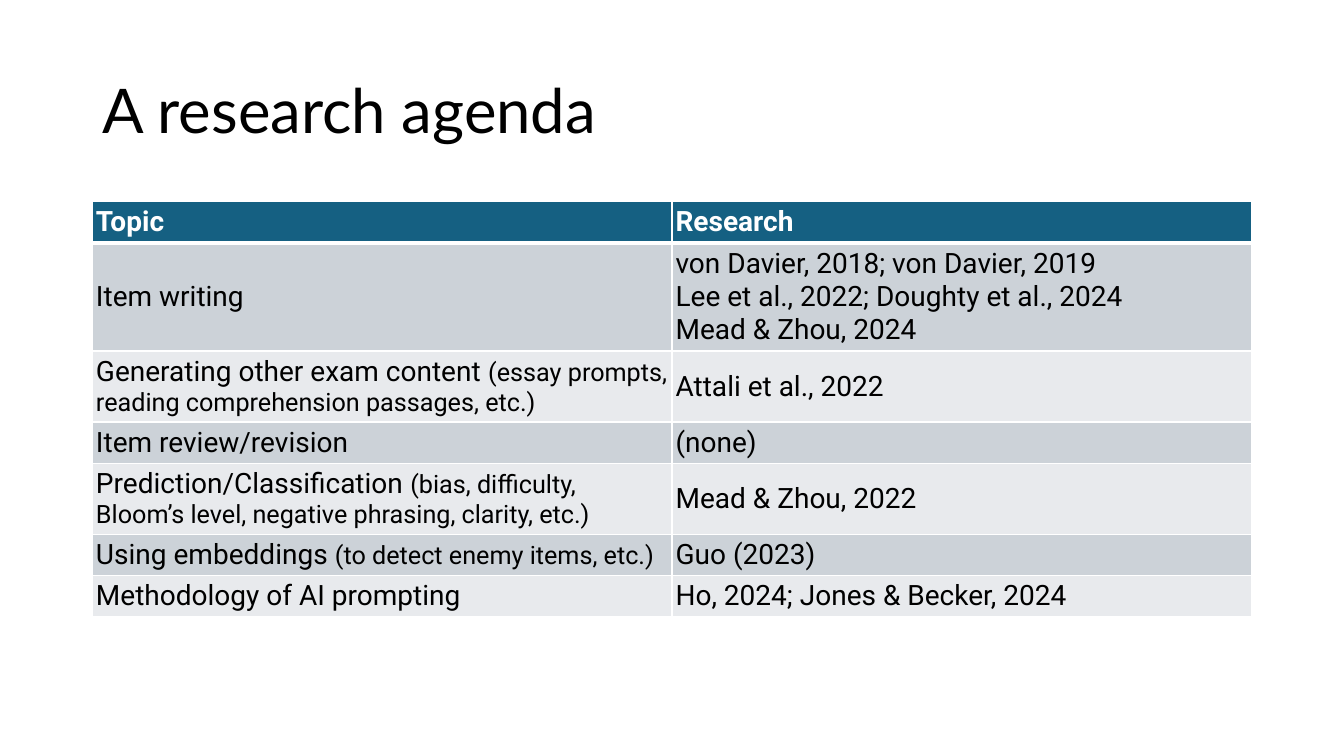
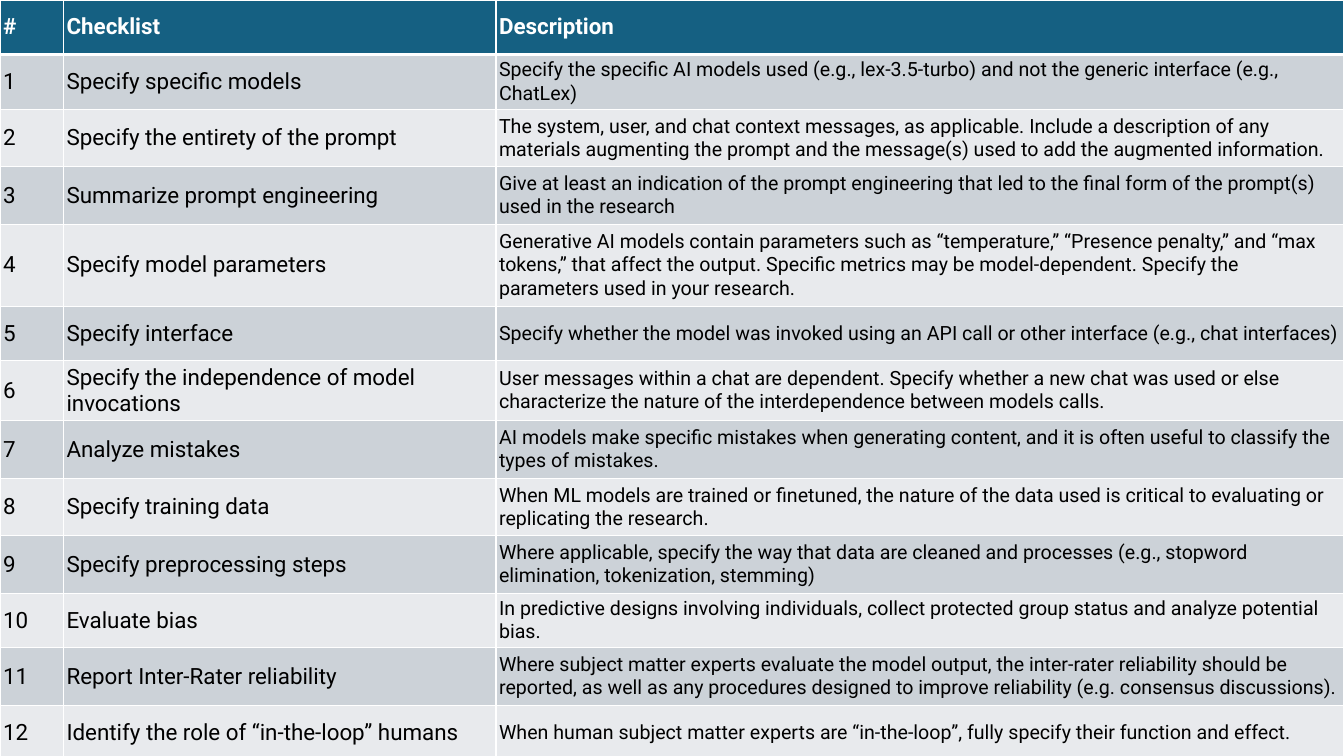
from dataclasses import dataclass

from lxml.etree import SubElement
from pptx import Presentation
from pptx.dml.color import RGBColor
from pptx.enum.text import MSO_ANCHOR
from pptx.oxml.ns import qn
from pptx.slide import Slide
from pptx.table import _Cell
from pptx.text.text import _Paragraph
from pptx.util import Pt


@dataclass(frozen=True)
class Theme:
    head: str = "156082"
    bands: tuple[str, str] = ("CCD2D8", "E8EAED")
    white: str = "FFFFFF"
    black: str = "000000"
    serif: str = "Lato"
    body: str = "Roboto"
    title: float = 44
    large: float = 20
    note: float = 18
    small: float = 16
    detail: float = 14
    thin: float = 1
    thick: float = 3


THEME = Theme()


@dataclass(frozen=True)
class Span:
    text: str
    size: float


Line = tuple[Span, ...]
Lines = tuple[Line, ...]


@dataclass(frozen=True)
class Row:
    cells: tuple[Lines, ...]
    height: float


@dataclass(frozen=True)
class Grid:
    left: float
    top: float
    widths: tuple[float, ...]
    inset: float
    rows: tuple[Row, ...]


@dataclass(frozen=True)
class Topic:
    name: str
    note: str
    works: tuple[str, ...]
    height: float


@dataclass(frozen=True)
class Check:
    name: str
    about: str
    height: float


# Agenda content; row heights follow the number of lines
ONE, TWO, THREE = 29.5, 50, 76
TOPICS = (
    Topic("Item writing", "",
          ("von Davier, 2018; von Davier, 2019",
           "Lee et al., 2022; Doughty et al., 2024",
           "Mead & Zhou, 2024"), THREE),
    Topic("Generating other exam content ",
          "(essay prompts, reading comprehension passages, etc.)",
          ("Attali et al., 2022",), TWO),
    Topic("Item review/revision", "", ("(none)",), ONE),
    Topic("Prediction/Classification ",
          "(bias, difficulty, Bloom’s level, negative phrasing, clarity, etc.)",
          ("Mead & Zhou, 2022",), TWO),
    Topic("Using embeddings ", "(to detect enemy items, etc.)",
          ("Guo (2023)",), ONE),
    Topic("Methodology of AI prompting", "",
          ("Ho, 2024; Jones & Becker, 2024",), ONE),
)

# Checklist content
LOW, MID, HIGH = 39, 41.1, 58.6
CHECKS = (
    Check("Specify specific models",
          "Specify the specific AI models used (e.g., lex-3.5-turbo) and not "
          "the generic interface (e.g., ChatLex)", LOW),
    Check("Specify the entirety of the prompt",
          "The system, user, and chat context messages, as applicable. Include "
          "a description of any materials augmenting the prompt and the "
          "message(s) used to add the augmented information.", MID),
    Check("Summarize prompt engineering",
          "Give at least an indication of the prompt engineering that led to "
          "the final form of the prompt(s) used in the research", MID),
    Check("Specify model parameters",
          "Generative AI models contain parameters such as “temperature,” "
          "“Presence penalty,” and “max tokens,” that affect the output. "
          "Specific metrics may be model-dependent. Specify the parameters "
          "used in your research.", HIGH),
    Check("Specify interface",
          "Specify whether the model was invoked using an API call or other "
          "interface (e.g., chat interfaces)", LOW),
    Check("Specify the independence of model invocations",
          "User messages within a chat are dependent. Specify whether a new "
          "chat was used or else characterize the nature of the "
          "interdependence between models calls.", MID),
    Check("Analyze mistakes",
          "AI models make specific mistakes when generating content, and it is "
          "often useful to classify the types of mistakes.", MID),
    Check("Specify training data",
          "When ML models are trained or finetuned, the nature of the data "
          "used is critical to evaluating or replicating the research.", MID),
    Check("Specify preprocessing steps",
          "Where applicable, specify the way that data are cleaned and "
          "processes (e.g., stopword elimination, tokenization, stemming)", MID),
    Check("Evaluate bias",
          "In predictive designs involving individuals, collect protected "
          "group status and analyze potential bias.", LOW),
    Check("Report Inter-Rater reliability",
          "Where subject matter experts evaluate the model output, the "
          "inter-rater reliability should be reported, as well as any "
          "procedures designed to improve reliability (e.g. consensus "
          "discussions).", MID),
    Check("Identify the role of “in-the-loop” humans",
          "When human subject matter experts are “in-the-loop”, fully specify "
          "their function and effect.", LOW),
)


def plain(text: str, size: float) -> Lines:
    return ((Span(text, size),),)


def header(names: tuple[str, ...], size: float, height: float) -> Row:
    return Row(tuple(plain(name, size) for name in names), height)


# Text
def add_run(para: _Paragraph, span: Span, font: str, color: str,
            bold: bool = False) -> None:
    run = para.add_run()
    run.text = span.text
    run.font.name = font
    run.font.size = Pt(span.size)
    run.font.bold = bold
    run.font.color.rgb = RGBColor.from_string(color)


def add_title(slide: Slide, text: str) -> None:
    box = slide.shapes.add_textbox(Pt(66), Pt(28.75), Pt(828), Pt(104.4))
    frame = box.text_frame
    frame.word_wrap = True
    frame.vertical_anchor = MSO_ANCHOR.MIDDLE
    para = frame.paragraphs[0]
    para.line_spacing = 0.9
    add_run(para, Span(text, THEME.title), THEME.serif, THEME.black)


# Tables
def add_edges(cell: _Cell, top: float, bottom: float) -> None:
    props = cell._tc.get_or_add_tcPr()
    edges = (("L", THEME.thin), ("R", THEME.thin), ("T", top), ("B", bottom))
    for side, width in edges:
        edge = SubElement(props, qn(f"a:ln{side}"), w=str(Pt(width)))
        fill = SubElement(edge, qn("a:solidFill"))
        SubElement(fill, qn("a:srgbClr"), val=THEME.white)


def fill_cell(cell: _Cell, lines: Lines, index: int, inset: float) -> None:
    head = index == 0
    add_edges(cell, THEME.thick if index == 1 else THEME.thin,
              THEME.thick if head else THEME.thin)
    cell.fill.solid()
    back = THEME.head if head else THEME.bands[(index - 1) % 2]
    cell.fill.fore_color.rgb = RGBColor.from_string(back)
    cell.vertical_anchor = MSO_ANCHOR.MIDDLE
    cell.margin_left = cell.margin_right = Pt(inset)
    cell.margin_top = cell.margin_bottom = Pt(inset)
    frame = cell.text_frame
    for num, line in enumerate(lines):
        para = frame.add_paragraph() if num else frame.paragraphs[0]
        for span in line:
            add_run(para, span, THEME.body,
                    THEME.white if head else THEME.black, head)


def add_grid(slide: Slide, grid: Grid) -> None:
    height = sum(row.height for row in grid.rows)
    shape = slide.shapes.add_table(
        len(grid.rows), len(grid.widths), Pt(grid.left), Pt(grid.top),
        Pt(sum(grid.widths)), Pt(height))
    table = shape.table
    table.horz_banding = False
    for col, width in zip(table.columns, grid.widths):
        col.width = Pt(width)
    for index, row in enumerate(grid.rows):
        table.rows[index].height = Pt(row.height)
        for col, lines in enumerate(row.cells):
            fill_cell(table.cell(index, col), lines, index, grid.inset)


# Rows from content
def topic_row(topic: Topic) -> Row:
    line: Line = (Span(topic.name, THEME.large),)
    if topic.note:
        line += (Span(topic.note, THEME.note),)
    works = tuple((Span(work, THEME.large),) for work in topic.works)
    return Row(((line,), works), topic.height)


def check_row(num: int, check: Check) -> Row:
    cells = (plain(str(num), THEME.small), plain(check.name, THEME.small),
             plain(check.about, THEME.detail))
    return Row(cells, check.height)


def main() -> None:
    deck = Presentation()
    deck.slide_width, deck.slide_height = Pt(960), Pt(540)
    blank = deck.slide_layouts[6]

    # Research agenda
    agenda = deck.slides.add_slide(blank)
    add_title(agenda, "A research agenda")
    rows = (header(("Topic", "Research"), THEME.large, ONE),
            *map(topic_row, TOPICS))
    add_grid(agenda, Grid(66, 144, (414, 414), 2.6, rows))

    # Reporting checklist
    report = deck.slides.add_slide(blank)
    rows = (header(("#", "Checklist", "Description"), THEME.small, LOW),
            *(check_row(num, check) for num, check in enumerate(CHECKS, 1)))
    add_grid(report, Grid(0, 0, (45.4, 308.9, 605.7), 2.2, rows))

    deck.save("out.pptx")


if __name__ == "__main__":
    main()
